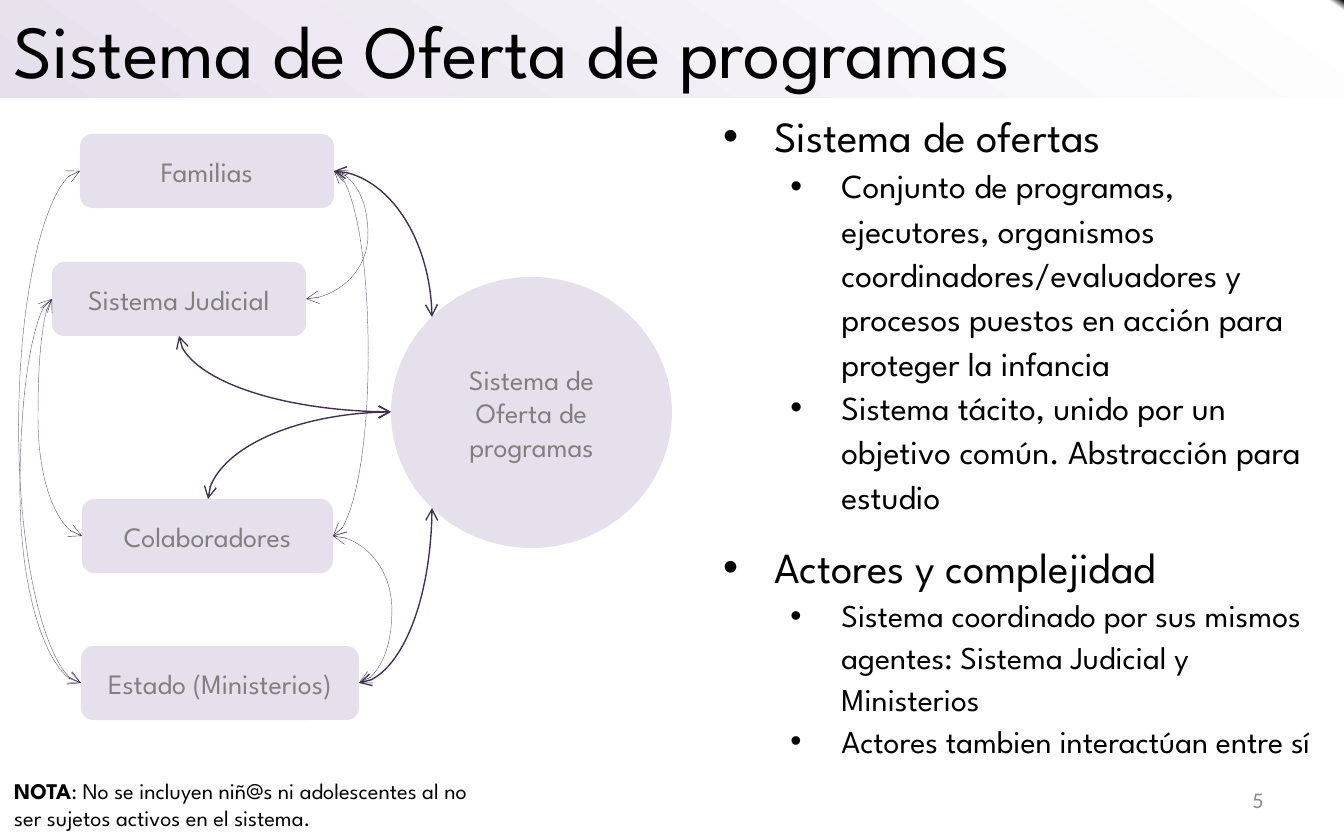
import math
from dataclasses import dataclass

from lxml import etree
from pptx import Presentation
from pptx import util as u
from pptx.dml.color import RGBColor
from pptx.enum import dml, shapes, text
from pptx.oxml.ns import qn

PX_PER_INCH = 134.4
EMU_PER_PX = 914400 / PX_PER_INCH


@dataclass(frozen=True)
class Theme:
    font: str = "League Spartan"
    number_font: str = "Calibri"
    lavender: str = "E6E0EC"
    white: str = "FFFFFF"
    black: str = "000000"
    gray: str = "808080"
    number_gray: str = "8C8C8C"
    purple: str = "403152"
    title: int = 40
    heading: int = 23
    body: int = 18
    body_tight: int = 17
    node: int = 15
    small: int = 12


THEME = Theme()


@dataclass(frozen=True)
class Node:
    label: str
    left: int
    top: int
    width: int
    height: int = 74
    kind: shapes.MSO_SHAPE = shapes.MSO_SHAPE.ROUNDED_RECTANGLE

    def at(self, across: float, down: float) -> tuple[int, int]:
        """Point at the given fractions of the width and height."""
        return round(self.left + self.width * across), round(self.top + self.height * down)


@dataclass(frozen=True)
class Curve:
    """Double arrow; with a bend it is an S or C through that x, else a quarter turn."""
    start: tuple[int, int]
    end: tuple[int, int]
    bend: int | None = None


@dataclass(frozen=True)
class Bullet:
    words: str
    size: int
    level: int = 1
    gap: float = 0


RIGHT, LEFT, TOP, BOTTOM = (1, 0.5), (0, 0.5), (0.5, 0), (0.5, 1)
DIAGONAL = (1 - math.sqrt(0.5)) / 2

OFFER = Node("Sistema de Oferta de programas", 391, 277, 281, 271, shapes.MSO_SHAPE.OVAL)
FAMILIES = Node("Familias", 80, 134, 254)
PARTNERS = Node("Colaboradores", 82, 499, 251)
COURTS = Node("Sistema Judicial", 52, 262, 254)
STATE = Node("Estado (Ministerios)", 81, 646, 278)
NODES = [OFFER, FAMILIES, PARTNERS, COURTS, STATE]

CURVES = [
    Curve(FAMILIES.at(*RIGHT), OFFER.at(DIAGONAL, DIAGONAL)),
    Curve(OFFER.at(*LEFT), COURTS.at(*BOTTOM)),
    Curve(OFFER.at(*LEFT), PARTNERS.at(*TOP)),
    Curve(STATE.at(*RIGHT), OFFER.at(DIAGONAL, 1 - DIAGONAL)),
    Curve(STATE.at(*RIGHT), PARTNERS.at(*RIGHT), 392),
    Curve(STATE.at(*LEFT), FAMILIES.at(*LEFT), 19),
    Curve(STATE.at(*LEFT), COURTS.at(*LEFT), 20),
    Curve(PARTNERS.at(*LEFT), COURTS.at(*LEFT), 38),
    Curve(PARTNERS.at(*RIGHT), FAMILIES.at(*RIGHT), 368),
    Curve(COURTS.at(*RIGHT), FAMILIES.at(*RIGHT), 368),
]

BULLETS = [
    Bullet("Sistema de ofertas", THEME.heading, 0),
    Bullet("Conjunto de programas, ejecutores, organismos coordinadores/evaluadores "
           "y procesos puestos en acción para proteger la infancia", THEME.body),
    Bullet("Sistema tácito, unido por un objetivo común. Abstracción para estudio", THEME.body),
    Bullet("Actores y complejidad", THEME.heading, 0, gap=10.5),
    Bullet("Sistema coordinado por sus mismos agentes: Sistema Judicial y Ministerios",
           THEME.body_tight),
    Bullet("Actores tambien interactúan entre sí", THEME.body_tight),
]


def px(length: float) -> u.Emu:
    return u.Emu(round(length * EMU_PER_PX))


def write(para, words: str, *, size: int, color: str = THEME.black, font: str = THEME.font,
          bold: bool = False, align=text.PP_ALIGN.LEFT) -> None:
    para.alignment = align
    span = para.add_run()
    span.text = words
    span.font.size = u.Pt(size)
    span.font.name = font
    span.font.bold = bold
    span.font.color.rgb = RGBColor.from_string(color)


def add_text_frame(page, left: int, top: int, width: int, height: int,
                   anchor=text.MSO_ANCHOR.TOP):
    box = page.shapes.add_textbox(px(left), px(top), px(width), px(height))
    box.text_frame.word_wrap = True
    box.text_frame.vertical_anchor = anchor
    return box.text_frame


def add_title(page) -> None:
    title = page.shapes.title
    title.left, title.top, title.width, title.height = px(0), px(0), px(1344), px(98)
    title.fill.gradient()
    title.fill.gradient_angle = 55
    stops = title._element.spPr.find(qn("a:gradFill")).find(qn("a:gsLst"))
    for stop in list(stops):
        stops.remove(stop)
    for position, color in [(0, THEME.lavender), (99, THEME.white),
                            (100, THEME.black), (100, THEME.white)]:
        stop = etree.SubElement(stops, qn("a:gs"), pos=str(position * 1000))
        etree.SubElement(stop, qn("a:srgbClr"), val=color)
    frame = title.text_frame
    frame.auto_size = text.MSO_AUTO_SIZE.NONE
    frame.vertical_anchor = text.MSO_ANCHOR.MIDDLE
    write(frame.paragraphs[0], "Sistema de Oferta de programas", size=THEME.title)


def add_node(page, node: Node) -> None:
    shape = page.shapes.add_shape(node.kind, px(node.left), px(node.top),
                                  px(node.width), px(node.height))
    shape.shadow.inherit = False
    shape.fill.solid()
    shape.fill.fore_color.rgb = RGBColor.from_string(THEME.lavender)
    shape.line.fill.background()
    shape.text_frame.word_wrap = True
    shape.text_frame.vertical_anchor = text.MSO_ANCHOR.MIDDLE
    write(shape.text_frame.paragraphs[0], node.label, size=THEME.node,
          color=THEME.gray, align=text.PP_ALIGN.CENTER)


def add_curve(page, curve: Curve) -> None:
    connector = page.shapes.add_connector(shapes.MSO_CONNECTOR.CURVE,
                                          *map(px, curve.start + curve.end))
    line = connector.line
    line.color.rgb = RGBColor.from_string(THEME.purple)
    properties = connector._element.spPr
    geometry = properties.find(qn("a:prstGeom"))
    if curve.bend is None:
        line.width = u.Pt(0.75)
        geometry.set("prst", "curvedConnector2")
    else:
        line.width = u.Pt(0.25)
        line.dash_style = dml.MSO_LINE.ROUND_DOT
        start_x, end_x = curve.start[0], curve.end[0]
        ratio = (curve.bend - start_x) / (end_x - start_x)
        etree.SubElement(geometry.find(qn("a:avLst")), qn("a:gd"),
                         name="adj1", fmla=f"val {round(ratio * 100000)}")
    for end in ("a:headEnd", "a:tailEnd"):
        etree.SubElement(properties.find(qn("a:ln")), qn(end), type="arrow")
    etree.SubElement(properties, qn("a:effectLst"))


def add_bullets(page, bullets: list[Bullet]) -> None:
    frame = add_text_frame(page, 710, 98, 634, 718)
    for index, bullet in enumerate(bullets):
        para = frame.add_paragraph() if index else frame.paragraphs[0]
        para.level = bullet.level
        para.line_spacing = 1.1
        para.space_before = u.Pt(bullet.gap)
        write(para, bullet.words, size=bullet.size)
        properties = para._p.get_or_add_pPr()
        properties.set("marL", str(u.Inches(0.38 + 0.5 * bullet.level)))
        properties.set("indent", str(u.Inches(-0.38)))
        etree.SubElement(properties, qn("a:buFont"), typeface="Arial")
        etree.SubElement(properties, qn("a:buChar"), char="•")


def add_footer(page) -> None:
    number = add_text_frame(page, 964, 778, 313, 44, text.MSO_ANCHOR.MIDDLE)
    write(number.paragraphs[0], "5", size=THEME.small, color=THEME.number_gray,
          font=THEME.number_font, align=text.PP_ALIGN.RIGHT)
    note = add_text_frame(page, 1, 771, 731, 67)
    write(note.paragraphs[0], "NOTA", size=THEME.small, bold=True)
    write(note.paragraphs[0], ": No se incluyen niñ@s ni adolescentes al no", size=THEME.small)
    write(note.add_paragraph(), "ser sujetos activos en el sistema.", size=THEME.small)


def main() -> None:
    deck = Presentation()
    deck.slide_width, deck.slide_height = px(1344), px(840)
    page = deck.slides.add_slide(deck.slide_layouts[5])
    add_title(page)
    for node in NODES:
        add_node(page, node)
    for curve in CURVES:
        add_curve(page, curve)
    add_bullets(page, BULLETS)
    add_footer(page)
    deck.save("out.pptx")


if __name__ == "__main__":
    main()
